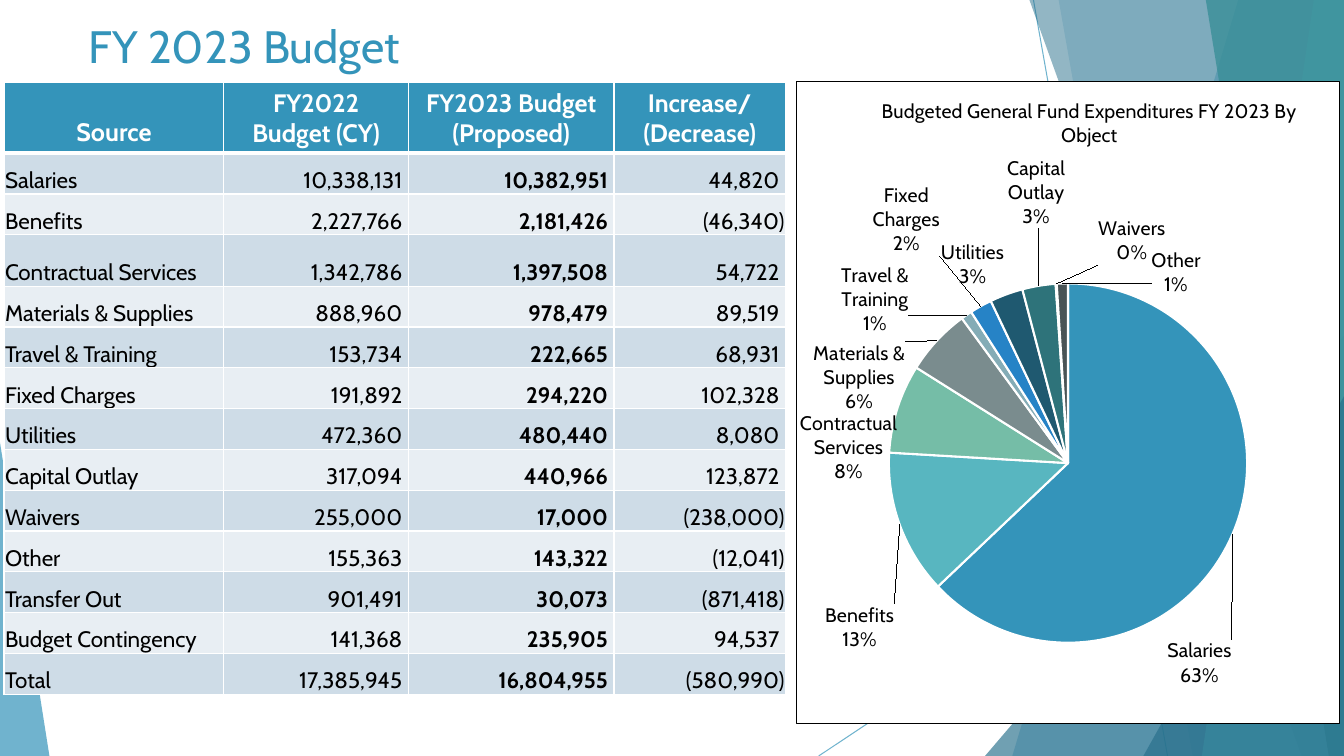
from pptx import Presentation
from pptx.chart.data import CategoryChartData
from pptx.dml.color import RGBColor
from pptx.enum import chart as charts, shapes, text
from pptx.oxml import parse_xml
from pptx.oxml.ns import nsdecls, qn
from pptx.util import Inches, Pt

FONT = "Cabin"
BLUE, DEEP_BLUE = "3494BA", "276F8B"


def paint(fill, color, alpha=100):
    """Fill a shape, cell or line solidly, with alpha as percent opacity."""
    fill.solid()
    fill.fore_color.rgb = RGBColor.from_string(color)
    if alpha < 100:
        for tint in fill._xPr.iter(qn("a:srgbClr")):
            tint.append(parse_xml(f'<a:alpha {nsdecls("a")} val="{alpha * 1000}"/>'))


def set_layout(parent, index, **place):
    """Give a chart part a manual layout as fractions of the chart."""
    for old in parent.findall(qn("c:layout")):
        parent.remove(old)
    modes = '<c:layoutTarget val="inner"/>' if "w" in place else ""
    modes += '<c:xMode val="edge"/><c:yMode val="edge"/>'
    sizes = "".join(f'<c:{name} val="{value}"/>' for name, value in place.items())
    parent.insert(index, parse_xml(
        f'<c:layout {nsdecls("c")}><c:manualLayout>{modes}{sizes}</c:manualLayout></c:layout>'))


deck = Presentation()
deck.slide_width, deck.slide_height = Inches(13.33), Inches(7.5)
page = deck.slides.add_slide(deck.slide_layouts[6])

# Background facets
for x1, y1, x2, y2 in [(10.25, 0, 11.58, 7.5), (13.33, 4.03, 8.12, 7.5)]:
    ray = page.shapes.add_connector(shapes.MSO_CONNECTOR.STRAIGHT,
                                    Inches(x1), Inches(y1), Inches(x2), Inches(y2))
    ray.line.width = Pt(0.75)
    paint(ray.line.fill, BLUE, 70)
    ray._element.spPr.append(parse_xml(f'<a:effectLst {nsdecls("a")}/>'))

# Bands run from a top-left x to a bottom-left x, out to the right edge;
# triangles are left, top, width, height and the apex position
facets = [
    ("band", (12.28, 10.04), BLUE, 36),
    ("band", (10.5, 11.83), BLUE, 20),
    ("triangle", (9.77, 3.33, 3.56, 4.17, 1), DEEP_BLUE, 66),
    ("band", (10.21, 12.91), DEEP_BLUE, 50),
    ("band", (13.03, 11.92), "58B6C0", 70),
    ("band", (11.96, 13.18), "3A8F98", 80),
    ("triangle", (11.34, 3.93, 1.99, 3.57, 1), DEEP_BLUE, 66),
    ("triangle", (0, 4.39, 0.49, 3.11, 0), BLUE, 70),
]
for kind, place, color, alpha in facets:
    if kind == "band":
        top_x, bottom_x = place
        outline = page.shapes.build_freeform(Inches(top_x), Inches(0))
        outline.add_line_segments([(Inches(x), Inches(y)) for x, y in
                                   [(13.33, 0), (13.33, 7.5), (bottom_x, 7.5)]])
        facet = outline.convert_to_shape()
    else:
        *box, apex = place
        facet = page.shapes.add_shape(shapes.MSO_SHAPE.ISOSCELES_TRIANGLE, *map(Inches, box))
        facet.adjustments[0] = apex
    facet.shadow.inherit = False
    facet.line.fill.background()
    paint(facet.fill, color, alpha)

# Title
title = page.shapes.add_textbox(Inches(0.78), Inches(0.12), Inches(9.4), Inches(0.65))
title.text_frame.word_wrap = True
title.text_frame.vertical_anchor = text.MSO_ANCHOR.MIDDLE
para = title.text_frame.paragraphs[0]
para.text = "FY 2023 Budget"
para.font.name, para.font.size = FONT, Pt(32.4)
para.font.color.rgb = RGBColor.from_string(BLUE)

# Budget table: the last column is the proposed budget less the current one
headings = ["Source", "FY2022 Budget (CY)", "FY2023 Budget (Proposed)", "Increase/\n(Decrease)"]
budget = [
    ("Salaries", 10338131, 10382951),
    ("Benefits", 2227766, 2181426),
    ("Contractual Services", 1342786, 1397508),
    ("Materials & Supplies", 888960, 978479),
    ("Travel & Training", 153734, 222665),
    ("Fixed Charges", 191892, 294220),
    ("Utilities", 472360, 480440),
    ("Capital Outlay", 317094, 440966),
    ("Waivers", 255000, 17000),
    ("Other", 155363, 143322),
    ("Transfer Out", 901491, 30073),
    ("Budget Contingency", 141368, 235905),
    ("Total", 17385945, 16804955),
]
rows = [headings]
for source, current, proposed in budget:
    change = proposed - current
    rows.append([source, f"{current:,} ", f"{proposed:,} ",
                 f"{change:,} " if change >= 0 else f"({-change:,})"])

table = page.shapes.add_table(len(rows), 4, Inches(0.04), Inches(0.82),
                              Inches(7.75), Inches(6.1)).table
for column, width in zip(table.columns, [2.18, 1.83, 2.04, 1.7]):
    column.width = Inches(width)
for r, values in enumerate(rows):
    header = r == 0
    table.rows[r].height = Inches(0.7 if header else 0.51 if r == 3 else 0.405)
    for c, value in enumerate(values):
        cell = table.cell(r, c)
        cell.text = value
        cell.vertical_anchor = text.MSO_ANCHOR.BOTTOM
        if not header:
            cell.margin_left = cell.margin_right = cell.margin_top = Inches(0.01)
            cell.margin_bottom = 0
        paint(cell.fill, BLUE if header else "CEDCE7" if r % 2 else "E8EEF3")
        for para in cell.text_frame.paragraphs:
            para.alignment = (text.PP_ALIGN.CENTER if header else
                              text.PP_ALIGN.RIGHT if c else text.PP_ALIGN.LEFT)
            para.font.name, para.font.size = FONT, Pt(18 if header else 16)
            para.font.bold = header or c == 2
            para.font.color.rgb = RGBColor.from_string("FFFFFF" if header else "000000")
        for i, side in enumerate("LRTB"):
            thick = (header and side == "B") or (r == 1 and side == "T")
            cell._tc.get_or_add_tcPr().insert(i, parse_xml(
                f'<a:ln{side} {nsdecls("a")} w="{Pt(3 if thick else 1)}"><a:solidFill>'
                f'<a:srgbClr val="FFFFFF"/></a:solidFill></a:ln{side}>'))

# Pie chart: share, slice colour, and label shift as fractions of the chart.
# A share of exactly 0 gets no label, so Waivers holds its 0.1 percent.
slices = [
    ("Salaries", 63, "3494BA", (-0.13, 0.16)),
    ("Benefits", 13, "58B6C0", (0, 0.12)),
    ("Contractual Services", 8, "75BDA7", (0.01, 0.12)),
    ("Materials & Supplies", 6, "7A8C8E", (-0.05, 0.12)),
    ("Travel & Training", 1, "84ACB6", (-0.1, 0.04)),
    ("Fixed Charges", 2, "2683C6", (-0.07, -0.07)),
    ("Utilities", 3, "1F5970", (0, 0)),
    ("Capital Outlay", 3, "2E737A", (0.05, -0.08)),
    ("Waivers", 0.1, "3B7C68", (0.14, -0.02)),
    ("Other", 1, "495456", (0.21, 0.03)),
    ("Transfer Out", 0, "466D76", None),
]
data = CategoryChartData()
data.categories = [name for name, *_ in slices]
data.add_series("Series 1", [share for _, share, *_ in slices])
chart = page.shapes.add_chart(charts.XL_CHART_TYPE.PIE, Inches(7.88), Inches(0.8),
                              Inches(5.41), Inches(6.38), data).chart
chart.has_legend = False
chart.font.name, chart.font.size = FONT, Pt(14)
chart.font.color.rgb = RGBColor.from_string("000000")
chart._chartSpace.find(qn("c:txPr")).addprevious(parse_xml(
    f'<c:spPr {nsdecls("c", "a")}><a:solidFill><a:srgbClr val="FFFFFF"/></a:solidFill>'
    f'<a:ln w="{Pt(0.75)}"><a:solidFill><a:srgbClr val="000000"/></a:solidFill></a:ln></c:spPr>'))

chart.has_title = True
heading = chart.chart_title.text_frame.paragraphs[0]
heading.text = "Budgeted General Fund Expenditures FY 2023 By Object"
heading.font.name, heading.font.size, heading.font.bold = FONT, Pt(14), False
heading.font.color.rgb = RGBColor.from_string("000000")
set_layout(chart.chart_title._element, 1, x=0.15, y=0.02)
set_layout(chart._chartSpace.chart.plotArea, 0, x=0.17, y=0.21, w=0.66, h=0.77)

pie = chart.plots[0]
pie.vary_by_categories = True
series = pie.series[0]
labels = series.data_labels
labels.show_value, labels.show_category_name, labels.show_percentage = False, True, True
labels.number_format, labels.number_format_is_linked = "0%", False
labels.position = charts.XL_LABEL_POSITION.OUTSIDE_END
labels.font.name, labels.font.size = FONT, Pt(14)
labels.font.color.rgb = RGBColor.from_string("000000")
label_style = "".join(f'<c:show{name} val="{int(name in ("CatName", "Percent"))}"/>' for name in
                      ["LegendKey", "Val", "CatName", "SerName", "Percent", "BubbleSize"])
# A set label width keeps the long word "Contractual" on one line
wide_label = ('<c:extLst><c:ext uri="{CE6537A1-D6FC-4f65-9D91-7224C49458BB}" '
              'xmlns:c15="http://schemas.microsoft.com/office/drawing/2012/chart"><c15:layout>'
              '<c:manualLayout><c:w val="0.2"/><c:h val="0.12"/></c:manualLayout>'
              '</c15:layout></c:ext></c:extLst>')
for i, (name, share, color, shift) in enumerate(slices):
    wedge = series.points[i].format
    paint(wedge.fill, color)
    paint(wedge.line.fill, "FFFFFF")
    wedge.line.width = Pt(1.5)
    wide = name == "Contractual Services"
    if shift is None:
        body = '<c:delete val="1"/>'
    else:
        body = (f'<c:layout><c:manualLayout><c:x val="{shift[0]}"/><c:y val="{shift[1]}"/>'
                '</c:manualLayout></c:layout><c:numFmt formatCode="0%" sourceLinked="0"/>'
                '<c:spPr/><c:txPr><a:bodyPr/><a:p><a:pPr><a:defRPr sz="1400"><a:solidFill>'
                '<a:srgbClr val="000000"/></a:solidFill>'
                f'<a:latin typeface="{FONT}"/></a:defRPr></a:pPr></a:p></c:txPr>'
                f'<c:dLblPos val="{"bestFit" if wide else "outEnd"}"/>{label_style}'
                f'<c:separator>\n</c:separator>{wide_label if wide else ""}')
    labels._element.insert(i, parse_xml(
        f'<c:dLbl {nsdecls("c", "a")}><c:idx val="{i}"/>{body}</c:dLbl>'))

deck.save("out.pptx")
